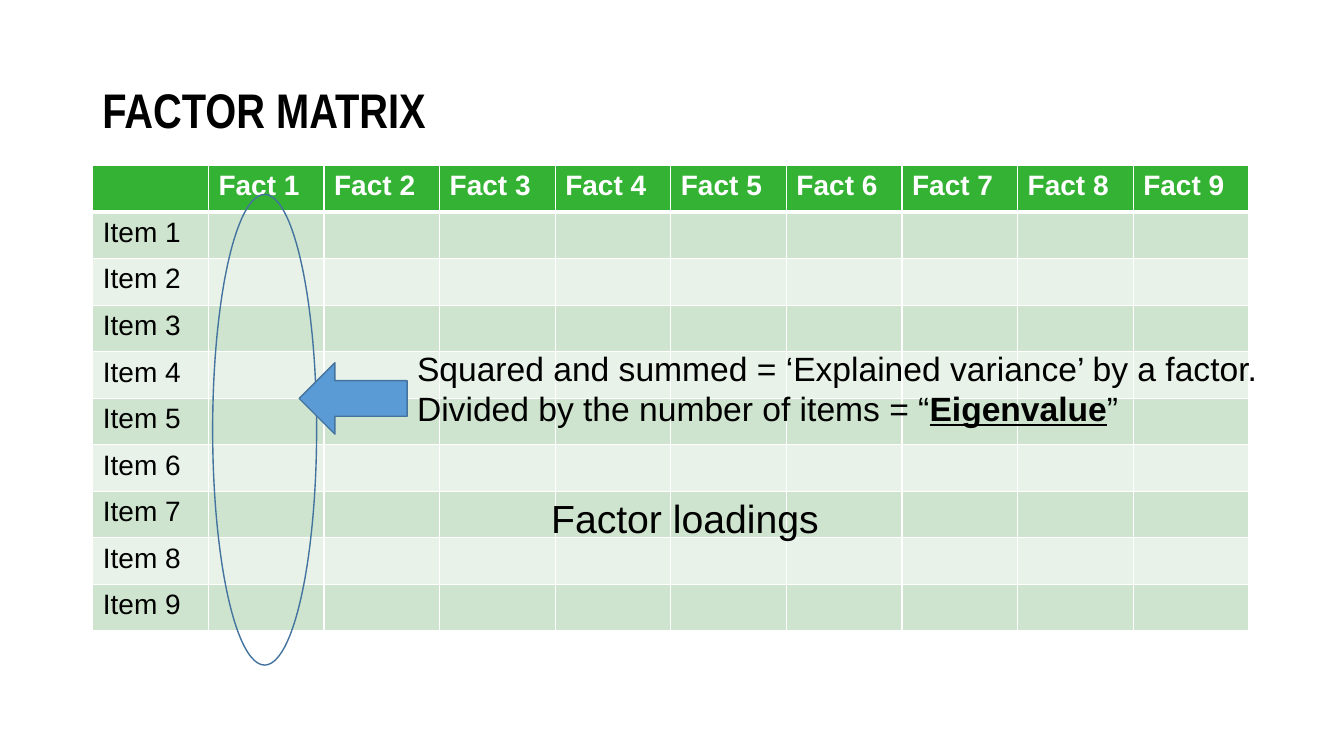
"""Build a slide that explains eigenvalues on a factor matrix."""
from lxml import etree
from pptx import Presentation
from pptx.dml.color import RGBColor
from pptx.enum.shapes import MSO_SHAPE
from pptx.enum.text import MSO_ANCHOR, MSO_AUTO_SIZE
from pptx.oxml.ns import qn
from pptx.util import Cm, Pt

ELLIPSE, ARROW = MSO_SHAPE.OVAL, MSO_SHAPE.RIGHT_ARROW
MIDDLE, GROW = MSO_ANCHOR.MIDDLE, MSO_AUTO_SIZE.SHAPE_TO_FIT_TEXT

TITLE = [["FACTOR MATRIX"]]
FACTORS = [f"Fact {number}" for number in range(1, 10)]
ITEMS = [f"Item {number}" for number in range(1, 10)]
LOADINGS = [["Factor loadings"]]
EXPLANATION = [
    ["Squared and summed = ‘Explained variance’ by a factor."],
    ["Divided by the number of items = “", ("Eigenvalue",), "”"],
]

PLACES = {
    "title": (2.33, 1.01, 29.21, 3.68),
    "matrix": (2.34, 4.17, 29.13, 11.73),
    "loadings": (13.64, 12.34, 7.34, 1.45),
    "ellipse": (5.36, 4.9, 2.62, 11.86),
    "arrow": (7.54, 9.14, 2.72, 1.8),
    "explanation": (10.26, 8.64, 21.95, 2.31),
}
THEME = {
    "font": "Arial", "title_font": "Arial Narrow",
    "title": 34.7, "cell": 20, "loadings": 28, "explanation": 24,
    "text": "000000", "light": "FFFFFF", "header": "34B233",
    "bands": ("E8F2E8", "CEE4CE"),
    "accent": "5B9BD5", "outline": "43739E",
    "thin": 1, "thick": 3,
}


def place(name):
    return [Cm(length) for length in PLACES[name]]


def write(frame, paragraphs, size, color=THEME["text"], font=THEME["font"], bold=False, spacing=None):
    """Fill a text frame; a span given as a tuple is emphasised."""
    for index, spans in enumerate(paragraphs):
        para = frame.add_paragraph() if index else frame.paragraphs[0]
        if spacing:
            para.line_spacing = spacing
        for text in spans:
            strong = isinstance(text, tuple)
            span = para.add_run()
            span.text = text[0] if strong else text
            span.font.name, span.font.size = font, Pt(size)
            span.font.color.rgb = RGBColor.from_string(color)
            span.font.bold, span.font.underline = bold or strong, strong


def add_text(page, name, paragraphs, wrap=True, anchor=None, auto_size=GROW, **style):
    frame = page.shapes.add_textbox(*place(name)).text_frame
    frame.word_wrap, frame.auto_size = wrap, auto_size
    if anchor is not None:
        frame.vertical_anchor = anchor
    write(frame, paragraphs, THEME[name], **style)


def add_mark(page, name, kind, fill=None, rotation=0):
    mark = page.shapes.add_shape(kind, *place(name))
    mark.shadow.inherit = False
    mark.rotation = rotation
    if fill:
        mark.fill.solid()
        mark.fill.fore_color.rgb = RGBColor.from_string(fill)
    else:
        mark.fill.background()
    mark.line.color.rgb = RGBColor.from_string(THEME["outline"])
    mark.line.width = Pt(THEME["thin"])


def style_cell(cell, fill, top, bottom):
    properties = cell._tc.get_or_add_tcPr()
    widths = {"lnL": THEME["thin"], "lnR": THEME["thin"], "lnT": top, "lnB": bottom}
    for side, width in widths.items():
        line = etree.SubElement(properties, qn(f"a:{side}"), w=str(Pt(width)))
        solid = etree.SubElement(line, qn("a:solidFill"))
        etree.SubElement(solid, qn("a:srgbClr"), val=THEME["light"])
    cell.fill.solid()
    cell.fill.fore_color.rgb = RGBColor.from_string(fill)


def add_matrix(page):
    rows = [["", *FACTORS]] + [[item] + [""] * len(FACTORS) for item in ITEMS]
    left, top, width, height = place("matrix")
    table = page.shapes.add_table(len(rows), len(rows[0]), left, top, width, height).table
    for column in table.columns:
        column.width = width // len(rows[0])
    for index, texts in enumerate(rows):
        table.rows[index].height = height // len(rows)
        header = index == 0
        fill = THEME["header"] if header else THEME["bands"][index % 2]
        above = THEME["thick" if index == 1 else "thin"]
        below = THEME["thick" if header else "thin"]
        color = THEME["light" if header else "text"]
        for position, text in enumerate(texts):
            cell = table.cell(index, position)
            style_cell(cell, fill, above, below)
            if text:
                write(cell.text_frame, [[text]], THEME["cell"], color=color, bold=header)


def main():
    deck = Presentation()
    deck.slide_width, deck.slide_height = Cm(33.87), Cm(19.05)
    page = deck.slides.add_slide(deck.slide_layouts[6])
    add_text(page, "title", TITLE, anchor=MIDDLE, auto_size=None,
             font=THEME["title_font"], bold=True, spacing=0.9)
    add_matrix(page)
    add_text(page, "loadings", LOADINGS, wrap=False)
    add_mark(page, "ellipse", ELLIPSE)
    add_mark(page, "arrow", ARROW, fill=THEME["accent"], rotation=180)
    add_text(page, "explanation", EXPLANATION)
    deck.save("out.pptx")


if __name__ == "__main__":
    main()
